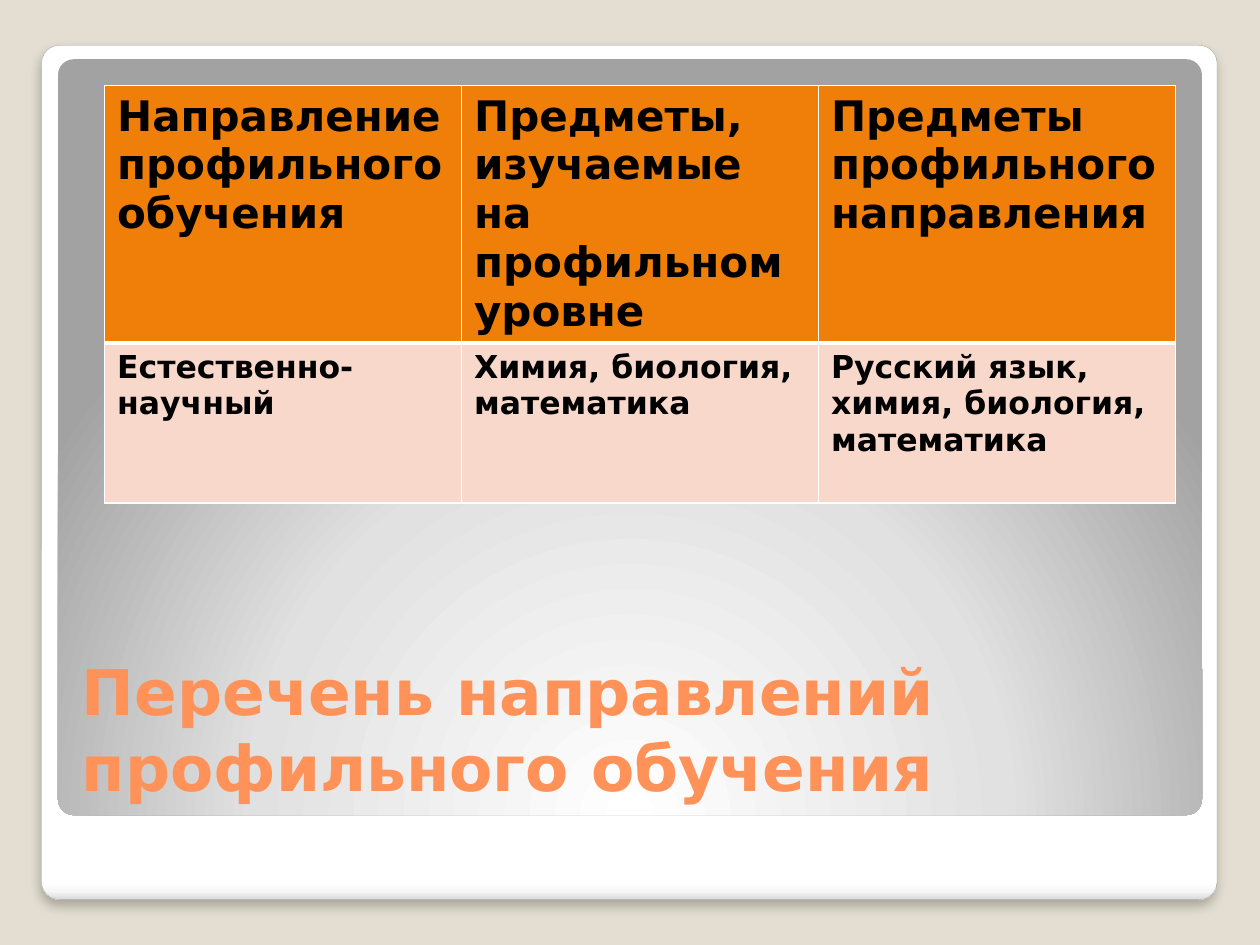
from lxml import etree
from pptx import Presentation
from pptx.dml.color import RGBColor as RGB
from pptx.enum.shapes import MSO_SHAPE as Shape
from pptx.enum.text import MSO_ANCHOR as Anchor, MSO_AUTO_SIZE as Fit, PP_ALIGN as Align
from pptx.oxml import parse_xml
from pptx.oxml.ns import nsdecls, qn
from pptx.util import Inches, Pt

FONT = "DejaVu Sans"
SAND = RGB(0xE3, 0xDE, 0xD1)
GREY = RGB(0xA4, 0xA4, 0xA4)
PEACH = RGB(0xFF, 0x92, 0x58)
ORANGE = RGB(0xF0, 0x7F, 0x09)
PINK = RGB(0xF9, 0xD8, 0xCC)
WHITE = RGB(0xFF, 0xFF, 0xFF)
BLACK = RGB(0, 0, 0)

CARD_STOPS = [(0, "FFFFFF"), (98, "FFFFFF"), (99, "F7F7F7"), (100, "DADADA")]
PANEL_STOPS = [(0, "FFFFFF"), (55, "E1E1E1"), (100, "A2A2A2")]
DOWN = '<a:lin ang="5400000" scaled="0"/>'
GLOW = ('<a:path path="circle"><a:fillToRect l="50000" t="175000" '
        'r="50000" b="-75000"/></a:path>')

TITLE = "Перечень направлений профильного обучения"
ROWS = [
    ["Направление профильного обучения",
     "Предметы, изучаемые на профильном уровне",
     "Предметы профильного направления"],
    ["Естественно-научный",
     "Химия, биология, математика",
     "Русский язык, химия, биология, математика"],
]
# Height in inches, text size, fill and bottom border width of each row
STYLES = [(2.03, 24, ORANGE, 3), (1.27, 18, PINK, 1)]


def style(par, size, color):
    for run in par.runs:
        font = run.font
        font.name, font.size, font.bold = FONT, Pt(size), True
        font.color.rgb = color


def add_panel(slide, box, stops, flow):
    """Add a rounded panel with a gradient that runs along flow."""
    panel = slide.shapes.add_shape(Shape.ROUNDED_RECTANGLE, *map(Inches, box))
    panel.adjustments[0] = 0.021
    panel.shadow.inherit = False
    panel.line.fill.background()
    marks = "".join(f'<a:gs pos="{pos * 1000}"><a:srgbClr val="{color}"/></a:gs>'
                    for pos, color in stops)
    grad = parse_xml(f'<a:gradFill {nsdecls("a")} rotWithShape="1">'
                     f'<a:gsLst>{marks}</a:gsLst>{flow}</a:gradFill>')
    panel.element.spPr.find(qn("a:prstGeom")).addnext(grad)
    return panel


def add_frame(slide, box):
    """Add the white card with its soft shadow and the grey panel on it."""
    left, top, width, height = box
    card = add_panel(slide, box, CARD_STOPS, DOWN)
    card.line.color.rgb, card.line.width = GREY, Pt(0.16)
    effects = card.element.spPr.find(qn("a:effectLst"))
    effects.append(parse_xml(
        f'<a:outerShdw {nsdecls("a")} blurRad="{Pt(6)}" dist="{Pt(4)}" '
        'dir="5400000" algn="tl" rotWithShape="0"><a:srgbClr val="000000">'
        '<a:alpha val="25000"/></a:srgbClr></a:outerShdw>'))
    inner = (left + 0.13, top + 0.11, width - 0.25, height - 0.78)
    add_panel(slide, inner, PANEL_STOPS, GLOW)


def set_title(slide, box):
    title = slide.shapes.title
    title.left, title.top, title.width, title.height = map(Inches, box)
    frame = title.text_frame
    frame.text = TITLE
    frame.word_wrap, frame.auto_size = True, Fit.NONE
    frame.vertical_anchor = Anchor.BOTTOM
    par = frame.paragraphs[0]
    par.alignment = Align.LEFT
    style(par, 36, PEACH)
    slide.shapes.element.append(title.element)  # bring to front


def set_edges(cell, below):
    """Draw white cell borders, with the bottom one as wide as below."""
    props = cell._tc.get_or_add_tcPr()
    widths = {"lnL": 1, "lnR": 1, "lnT": 1, "lnB": below}
    for spot, (tag, width) in enumerate(widths.items()):
        line = etree.Element(qn(f"a:{tag}"), w=str(Pt(width)))
        fill = etree.SubElement(line, qn("a:solidFill"))
        etree.SubElement(fill, qn("a:srgbClr"), val=str(WHITE))
        props.insert(spot, line)


def add_grid(slide, box):
    shape = slide.shapes.add_table(len(ROWS), len(ROWS[0]), *map(Inches, box))
    table = shape.table
    for row, texts, (height, size, fill, below) in zip(table.rows, ROWS, STYLES):
        row.height = Inches(height)
        for cell, text in zip(row.cells, texts):
            cell.text_frame.text = text
            style(cell.text_frame.paragraphs[0], size, BLACK)
            cell.fill.solid()
            cell.fill.fore_color.rgb = fill
            set_edges(cell, below)
    # The upper edge of the second row shares the thick rule
    for cell in table.rows[1].cells:
        cell._tc.tcPr.find(qn("a:lnT")).set("w", str(Pt(3)))


def main():
    deck = Presentation()
    deck.slide_width, deck.slide_height = Inches(10), Inches(7.5)
    slide = deck.slides.add_slide(deck.slide_layouts[5])
    back = slide.background.fill
    back.solid()
    back.fore_color.rgb = SAND
    add_frame(slide, (0.33, 0.36, 9.33, 6.78))
    set_title(slide, (0.55, 5.01, 8.95, 1.42))
    add_grid(slide, (0.83, 0.68, 8.5, 3.3))
    deck.save("out.pptx")


if __name__ == "__main__":
    main()
